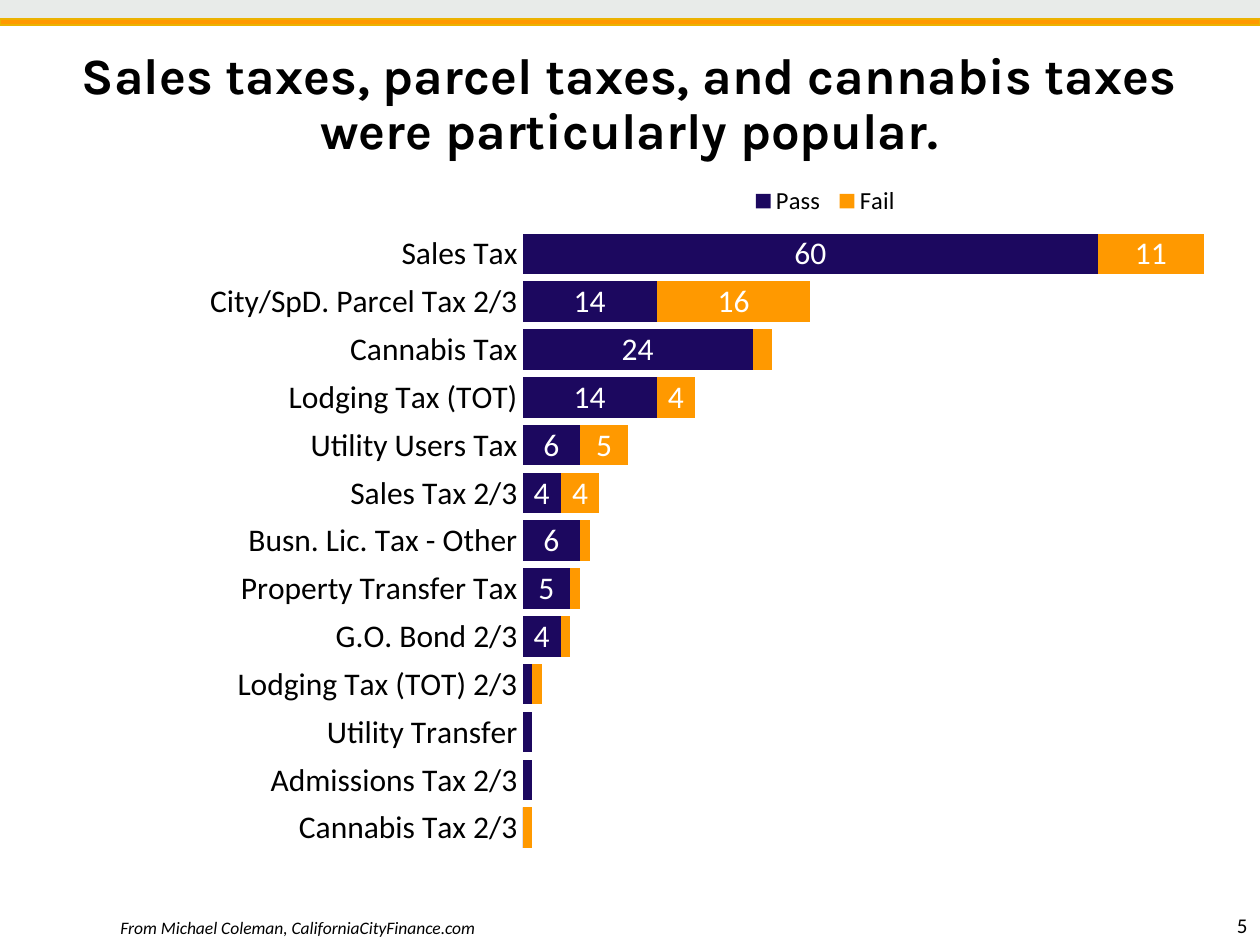
from lxml import etree
from pptx import Presentation
from pptx.chart.data import CategoryChartData
from pptx.dml.color import RGBColor
from pptx.enum.chart import (XL_CHART_TYPE, XL_LABEL_POSITION as LABEL_POS,
                             XL_LEGEND_POSITION as LEGEND_POS, XL_TICK_MARK as TICK)
from pptx.enum.shapes import MSO_SHAPE
from pptx.enum.text import MSO_ANCHOR as ANCHOR, PP_ALIGN as ALIGN
from pptx.oxml.ns import qn
from pptx.util import Cm, Pt

COLORS = {
    "text": "000000", "label": "FFFFFF", "band": "E8EBE9",
    "stripe": "FF9900", "stripe_line": "EBB201",
    "Pass": "1C085F", "Fail": "FF9900",
}
TITLE = "Sales taxes, parcel taxes, and cannabis taxes were particularly popular."
SOURCE = "From Michael Coleman, CaliforniaCityFinance.com"
PAGE = "5"
SERIES = ("Pass", "Fail")
MEASURES = [
    ("Sales Tax", 60, 11),
    ("City/SpD. Parcel Tax 2/3", 14, 16),
    ("Cannabis Tax", 24, 2),
    ("Lodging Tax (TOT)", 14, 4),
    ("Utility Users Tax", 6, 5),
    ("Sales Tax 2/3", 4, 4),
    ("Busn. Lic. Tax - Other", 6, 1),
    ("Property Transfer Tax", 5, 1),
    ("G.O. Bond 2/3", 4, 1),
    ("Lodging Tax (TOT) 2/3", 1, 1),
    ("Utility Transfer", 1, 0),
    ("Admissions Tax 2/3", 1, 0),
    ("Cannabis Tax 2/3", 0, 1),
]
MIN_LABELLED = 4
PLOT_BOX = (0.421, 0.082, 0.552, 0.852)
LEGEND_BOX = (0.6, 0.02, 0.13, 0.045)


def rgb(name):
    return RGBColor.from_string(COLORS[name])


def style(font, size, color="text", name="Calibri"):
    font.name, font.size = name, Pt(size)
    font.color.rgb = rgb(color)


def write(tf, text, size, align, name="Calibri", bold=False, italic=False):
    tf.word_wrap = True
    p = tf.paragraphs[0]
    p.alignment = align
    p.line_spacing = 0.9
    r = p.add_run()
    r.text = text
    style(r.font, size, name=name)
    r.font.bold, r.font.italic = bold, italic


def add_bar(s, top, height, color, line=None):
    sp = s.shapes.add_shape(MSO_SHAPE.RECTANGLE, 0, Cm(top), Cm(25.4), Cm(height))
    sp.shadow.inherit = False
    sp.fill.solid()
    sp.fill.fore_color.rgb = rgb(color)
    if line:
        sp.line.color.rgb = rgb(line)
        sp.line.width = Pt(1)
    else:
        sp.line.fill.background()


def add_note(s, box, text, size, align, anchor, italic=False):
    tf = s.shapes.add_textbox(*map(Cm, box)).text_frame
    tf.vertical_anchor = anchor
    write(tf, text, size, align, italic=italic)


def place(parent, after, box, inner=False):
    for old in parent.findall(qn("c:layout")):
        parent.remove(old)
    layout = etree.Element(qn("c:layout"))
    manual = etree.SubElement(layout, qn("c:manualLayout"))
    settings = [("layoutTarget", "inner")] if inner else []
    settings += [("xMode", "edge"), ("yMode", "edge"), *zip("xywh", box)]
    for tag, val in settings:
        etree.SubElement(manual, qn(f"c:{tag}")).set("val", str(val))
    if after is None:
        parent.insert(0, layout)
    else:
        after.addnext(layout)


def add_tax_chart(s):
    data = CategoryChartData()
    names, *columns = zip(*MEASURES)
    data.categories = names
    for name, vals in zip(SERIES, columns):
        data.add_series(name, vals)
    chart = s.shapes.add_chart(XL_CHART_TYPE.BAR_STACKED, Cm(0), Cm(3.43),
                               Cm(25.02), Cm(14.71), data).chart
    chart.has_title = False
    style(chart.font, 18)

    chart.has_legend = True
    legend = chart.legend
    legend.position = LEGEND_POS.TOP
    legend.include_in_layout = False
    style(legend.font, 14)

    cat = chart.category_axis
    cat.reverse_order = True
    cat.major_tick_mark = cat.minor_tick_mark = TICK.NONE
    cat.format.line.fill.background()
    style(cat.tick_labels.font, 18)

    val = chart.value_axis
    val.minimum_scale, val.maximum_scale = 0, 71.4
    val.has_major_gridlines = False
    val.visible = False

    plot = chart.plots[0]
    plot.gap_width, plot.overlap = 18, 100
    plot.vary_by_categories = False
    for ser in plot.series:
        ser.format.fill.solid()
        ser.format.fill.fore_color.rgb = rgb(ser.name)
        ser.data_labels.show_value = False
        for i, v in enumerate(ser.values):
            if v >= MIN_LABELLED:
                label = ser.points[i].data_label
                style(label.font, 18, "label")
                label.position = LABEL_POS.CENTER

    area = plot._element.getparent()
    place(area, None, PLOT_BOX, inner=True)
    box = area.getparent().find(qn("c:legend"))
    place(box, box.find(qn("c:legendPos")), LEGEND_BOX)


def main():
    prs = Presentation()
    prs.slide_width, prs.slide_height = Cm(25.4), Cm(19.05)
    s = prs.slides.add_slide(prs.slide_layouts[5])
    add_bar(s, 0, 0.5, "band")
    add_bar(s, 0.38, 0.12, "stripe", "stripe_line")

    title = s.shapes.title
    title.left, title.top, title.width, title.height = map(Cm, (1.17, 0.89, 23.06, 3.18))
    title.text_frame.vertical_anchor = ANCHOR.TOP
    write(title.text_frame, TITLE, 29, ALIGN.CENTER, name="Karla", bold=True)

    add_tax_chart(s)
    add_note(s, (2.18, 17.53, 22.5, 1.52), SOURCE, 10, ALIGN.LEFT, ANCHOR.BOTTOM, italic=True)
    add_note(s, (21.64, 18.31, 3.76, 0.76), PAGE, 12, ALIGN.RIGHT, ANCHOR.MIDDLE)
    prs.save("out.pptx")


if __name__ == "__main__":
    main()
